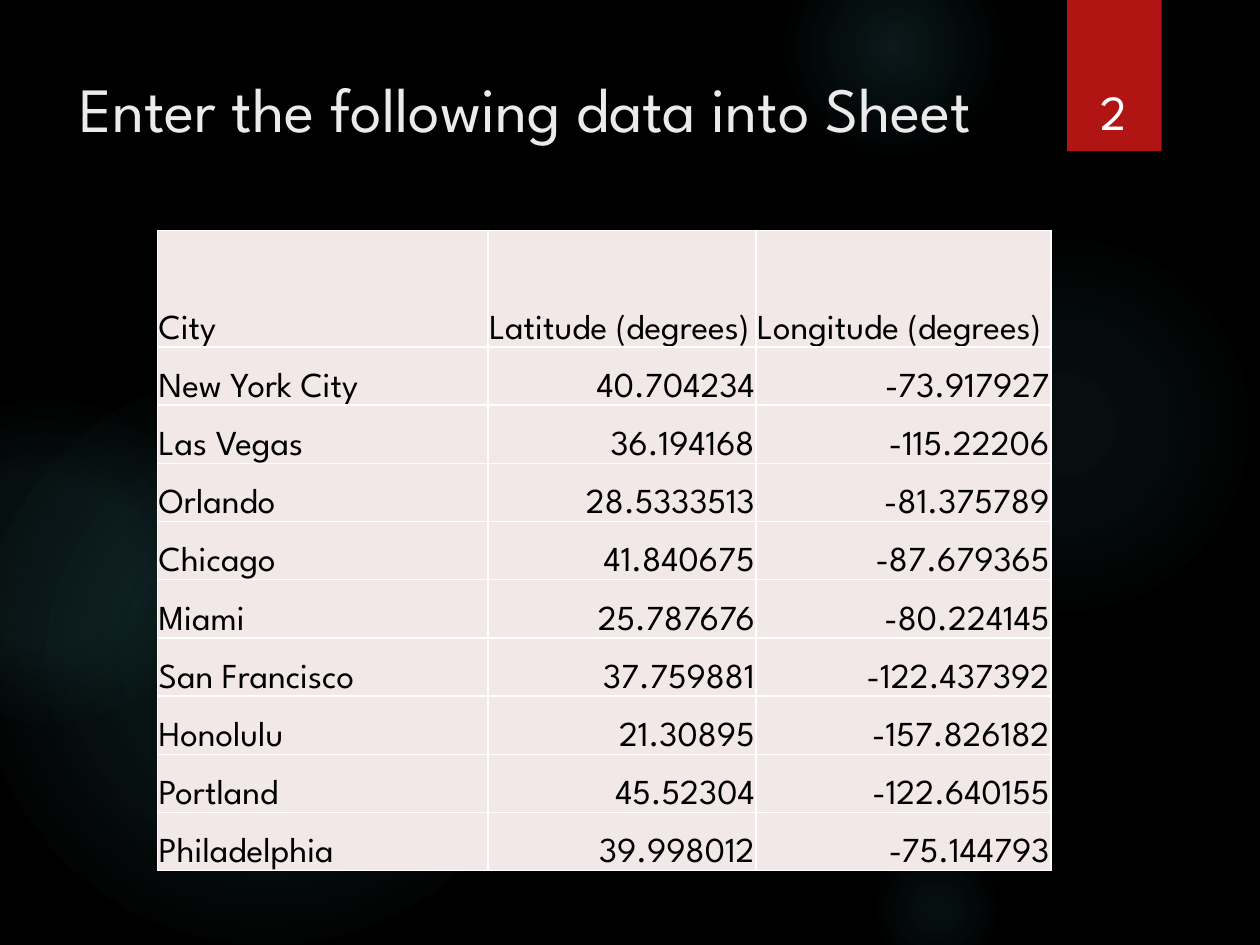
from lxml import etree
from pptx import Presentation
from pptx.dml.color import RGBColor
from pptx.enum.shapes import MSO_SHAPE
from pptx.enum.text import MSO_ANCHOR, PP_ALIGN
from pptx.oxml import parse_xml
from pptx.util import Inches, Pt

OVAL, RECT = MSO_SHAPE.OVAL, MSO_SHAPE.RECTANGLE
TOP, BOTTOM = MSO_ANCHOR.TOP, MSO_ANCHOR.BOTTOM
LEFT, CENTER, RIGHT = PP_ALIGN.LEFT, PP_ALIGN.CENTER, PP_ALIGN.RIGHT
NS = "http://schemas.openxmlformats.org/drawingml/2006/main"
TITLE_ONLY = 5
FONT = "League Spartan"
COLORS = {"back": "000000", "glow": "50B9C1", "tab": "B01513", "title": "EBEBEB",
          "cell": "F2E8E7", "grid": "FFFFFF", "ink": "000000", "number": "FFFFFF"}

# left, top, diameter, then (position, opacity) stops in percent
GLOWS = [
    (6.89, 1.83, 3.08, [(0, 7), (36, 6), (69, 0)]),
    (6.22, -0.5, 1.75, [(0, 14), (36, 7), (73, 0)]),
    (6.89, 6.67, 1.08, [(0, 9), (36, 5), (66, 0)]),
    (-0.17, 2.92, 4.58, [(0, 11), (36, 10), (75, 0)]),
    (-0.92, 3.17, 2.58, [(0, 8), (36, 8), (72, 0)]),
]
CITIES = [
    ("City", "Latitude (degrees)", "Longitude (degrees)"),
    ("New York City", "40.704234", "-73.917927"),
    ("Las Vegas", "36.194168", "-115.22206"),
    ("Orlando", "28.5333513", "-81.375789"),
    ("Chicago", "41.840675", "-87.679365"),
    ("Miami", "25.787676", "-80.224145"),
    ("San Francisco", "37.759881", "-122.437392"),
    ("Honolulu", "21.30895", "-157.826182"),
    ("Portland", "45.52304", "-122.640155"),
    ("Philadelphia", "39.998012", "-75.144793"),
]
COLUMN_SHARES = (0.37, 0.3, 0.33)
HEADER_UNITS = 2


def rgb(name):
    return RGBColor.from_string(COLORS[name])


def inches(box):
    return [Inches(v) for v in box]


def write(tf, text, size, color, align=LEFT):
    p = tf.paragraphs[0]
    p.alignment = align
    r = p.add_run()
    r.text = text
    for key, value in {"name": FONT, "size": Pt(size), "bold": False}.items():
        setattr(r.font, key, value)
    r.font.color.rgb = rgb(color)


def add_glow(s, left, top, size, stops):
    """Add a circle whose radial gradient fades to clear."""
    sp = s.shapes.add_shape(OVAL, *inches((left, top, size, size)))
    sp.shadow.inherit = False
    sp.line.fill.background()
    marks = "".join(
        f'<a:gs pos="{pos * 1000}"><a:srgbClr val="{COLORS["glow"]}">'
        f'<a:alpha val="{alpha * 1000}"/></a:srgbClr></a:gs>' for pos, alpha in stops)
    grad = parse_xml(
        f'<a:gradFill xmlns:a="{NS}" rotWithShape="1"><a:gsLst>{marks}</a:gsLst>'
        '<a:path path="circle"><a:fillToRect l="50000" t="50000" r="50000" b="50000"/>'
        '</a:path></a:gradFill>')
    sp.element.spPr.find(f"{{{NS}}}prstGeom").addnext(grad)


def add_number_tab(s, box, number):
    left, top, width, height = box
    tab = s.shapes.add_shape(RECT, *inches(box))
    tab.shadow.inherit = False
    tab.fill.solid()
    tab.fill.fore_color.rgb = rgb("tab")
    tab.line.fill.background()
    effects = tab.element.spPr.find(f"{{{NS}}}effectLst")
    effects.append(parse_xml(
        f'<a:outerShdw xmlns:a="{NS}" blurRad="{Pt(3)}" dist="{Pt(2)}" dir="5400000">'
        '<a:srgbClr val="000000"><a:alpha val="45000"/></a:srgbClr></a:outerShdw>'))

    label = s.shapes.add_textbox(*inches(
        (left + 0.02, top + 0.27 * height, 0.92 * width, 0.7 * height)))
    tf = label.text_frame
    tf.word_wrap = True
    tf.vertical_anchor = BOTTOM
    write(tf, number, 28, "number", CENTER)


def place_title(s, box, text):
    title = s.shapes.title
    s.shapes.element.append(title.element)  # in front of the glows
    for key, value in zip(("left", "top", "width", "height"), inches(box)):
        setattr(title, key, value)
    tf = title.text_frame
    tf.word_wrap = True
    tf.vertical_anchor = TOP
    write(tf, text, 36, "title")


def set_borders(cell):
    tc_pr = cell._tc.get_or_add_tcPr()
    for i, side in enumerate(("lnL", "lnR", "lnT", "lnB")):
        ln = etree.Element(f"{{{NS}}}{side}", w=str(Pt(1)))
        fill = etree.SubElement(ln, f"{{{NS}}}solidFill")
        etree.SubElement(fill, f"{{{NS}}}srgbClr", val=COLORS["grid"])
        tc_pr.insert(i, ln)


def add_city_table(s, box, rows):
    width, height = box[2:]
    table = s.shapes.add_table(len(rows), len(rows[0]), *inches(box)).table
    unit = height / (len(rows) - 1 + HEADER_UNITS)
    for column, share in zip(table.columns, COLUMN_SHARES):
        column.width = Inches(width * share)
    cell_format = {"margin_left": Inches(0.01), "margin_right": Inches(0.01),
                   "margin_top": Inches(0.01), "margin_bottom": 0,
                   "vertical_anchor": BOTTOM}
    for i, row in enumerate(rows):
        table.rows[i].height = Inches(unit * (1 if i else HEADER_UNITS))
        for j, text in enumerate(row):
            cell = table.cell(i, j)
            for key, value in cell_format.items():
                setattr(cell, key, value)
            cell.fill.solid()
            cell.fill.fore_color.rgb = rgb("cell")
            set_borders(cell)
            write(cell.text_frame, text, 20, "ink", RIGHT if i and j else LEFT)


def main():
    prs = Presentation()
    prs.slide_width, prs.slide_height = Inches(10), Inches(7.5)
    s = prs.slides.add_slide(prs.slide_layouts[TITLE_ONLY])
    s.background.fill.solid()
    s.background.fill.fore_color.rgb = rgb("back")
    for glow in GLOWS:
        add_glow(s, *glow)
    place_title(s, (0.53, 0.5, 7.72, 1.53), "Enter the following data into Sheet")
    add_city_table(s, (1.25, 1.83, 7.09, 5.08), CITIES)
    add_number_tab(s, (8.47, 0, 0.75, 1.2), "2")
    prs.save("out.pptx")


if __name__ == "__main__":
    main()
